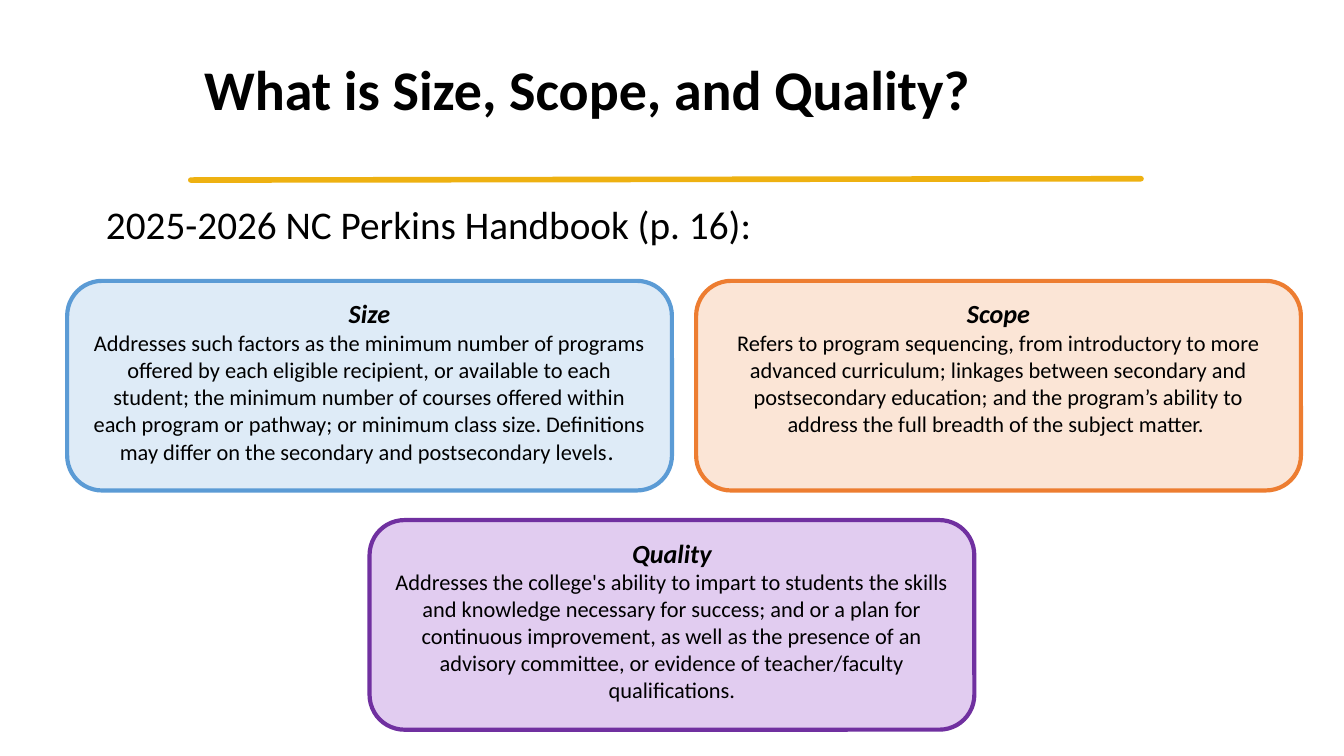
import pptx
import pptx.util
import pptx.dml.color
import pptx.enum.shapes
import pptx.enum.text
import pptx.oxml

Inches, Pt = pptx.util.Inches, pptx.util.Pt
RGBColor = pptx.dml.color.RGBColor
ANCHOR = pptx.enum.text.MSO_ANCHOR
ALIGN = pptx.enum.text.PP_ALIGN

BLACK = RGBColor(0x00, 0x00, 0x00)
GOLD = RGBColor(0xEE, 0xB1, 0x11)
BLUE, PALE_BLUE = RGBColor(0x5B, 0x9B, 0xD5), RGBColor(0xDE, 0xEB, 0xF7)
ORANGE, PALE_ORANGE = RGBColor(0xED, 0x7D, 0x31), RGBColor(0xFB, 0xE5, 0xD6)
PURPLE, PALE_PURPLE = RGBColor(0x70, 0x30, 0xA0), RGBColor(0xE1, 0xCC, 0xF0)

# Content
TITLE = "What is Size, Scope, and Quality?"
SOURCE = "2025-2026 NC Perkins Handbook (p. 16):"
# Term, definition, closing mark, left, top, border, fill
CARDS = [
    ("Size",
     "Addresses such factors as the minimum number of programs offered by each "
     "eligible recipient, or available to each student; the minimum number of "
     "courses offered within each program or pathway; or minimum class size. "
     "Definitions may differ on the secondary and postsecondary levels",
     ". ", 0.5, 2.09, BLUE, PALE_BLUE),
    ("Scope",
     "Refers to program sequencing, from introductory to more advanced "
     "curriculum; linkages between secondary and postsecondary education; and "
     "the program’s ability to address the full breadth of the subject matter. ",
     "", 5.18, 2.09, ORANGE, PALE_ORANGE),
    ("Quality",
     "Addresses the college's ability to impart to students the skills and "
     "knowledge necessary for success; and or a plan for continuous "
     "improvement, as well as the presence of an advisory committee, or "
     "evidence of teacher/faculty qualifications.",
     "", 2.75, 3.87, PURPLE, PALE_PURPLE),
]
CARD_WIDTH, CARD_HEIGHT = 4.5, 1.56
SLIDE_WIDTH = 10
SLIDE_HEIGHT = SLIDE_WIDTH * 9 / 16


def add_run(paragraph, text, size, **formats):
    run = paragraph.add_run()
    run.text = text
    run.font.color.rgb = BLACK
    for name, value in {"name": "Calibri", "size": Pt(size), **formats}.items():
        setattr(run.font, name, value)


def add_line_of_text(text, place, size, anchor, spacing, **formats):
    box = slide.shapes.add_textbox(*map(Inches, place))
    box.text_frame.word_wrap = True
    box.text_frame.vertical_anchor = anchor
    paragraph = box.text_frame.paragraphs[0]
    paragraph.line_spacing = spacing
    add_run(paragraph, text, size, **formats)


def add_card(term, definition, closing, left, top, border, fill):
    card = slide.shapes.add_shape(
        pptx.enum.shapes.MSO_SHAPE.ROUNDED_RECTANGLE,
        *map(Inches, (left, top, CARD_WIDTH, CARD_HEIGHT)))
    card.shadow.inherit = False
    card.fill.solid()
    card.fill.fore_color.rgb = fill
    card.line.color.rgb = border
    card.line.width = Pt(2.25)
    frame = card.text_frame
    frame.word_wrap = True
    frame.vertical_anchor = ANCHOR.TOP
    heading, body = frame.paragraphs[0], frame.add_paragraph()
    heading.alignment = body.alignment = ALIGN.CENTER
    add_run(heading, term, 14, bold=True, italic=True)
    add_run(body, definition, 12)
    if closing:
        add_run(body, closing, 13)


presentation = pptx.Presentation()
presentation.slide_width = Inches(SLIDE_WIDTH)
presentation.slide_height = Inches(SLIDE_HEIGHT)
slide = presentation.slides.add_slide(presentation.slide_layouts[6])

# Gold rule under the title
rule = slide.shapes.add_connector(
    pptx.enum.shapes.MSO_CONNECTOR.STRAIGHT,
    *map(Inches, (1.42, 1.34, 8.49, 1.33)))
rule.line.color.rgb = GOLD
rule.line.width = Pt(3)
rule.line._get_or_add_ln().set("cap", "rnd")
rule._element.spPr.append(pptx.oxml.parse_xml(
    '<a:effectLst xmlns:a="http://schemas.openxmlformats.org/drawingml/2006/main"/>'))

# Source and title
add_line_of_text(SOURCE, (0.69, 1.44, 8.62, 3.88), 21, ANCHOR.TOP, 1.0)
add_line_of_text(TITLE, (1.42, 0.14, 8.05, 1.09), 30, ANCHOR.MIDDLE, 0.9, bold=True)

# Definition cards
for card_content in CARDS:
    add_card(*card_content)

presentation.save("out.pptx")
